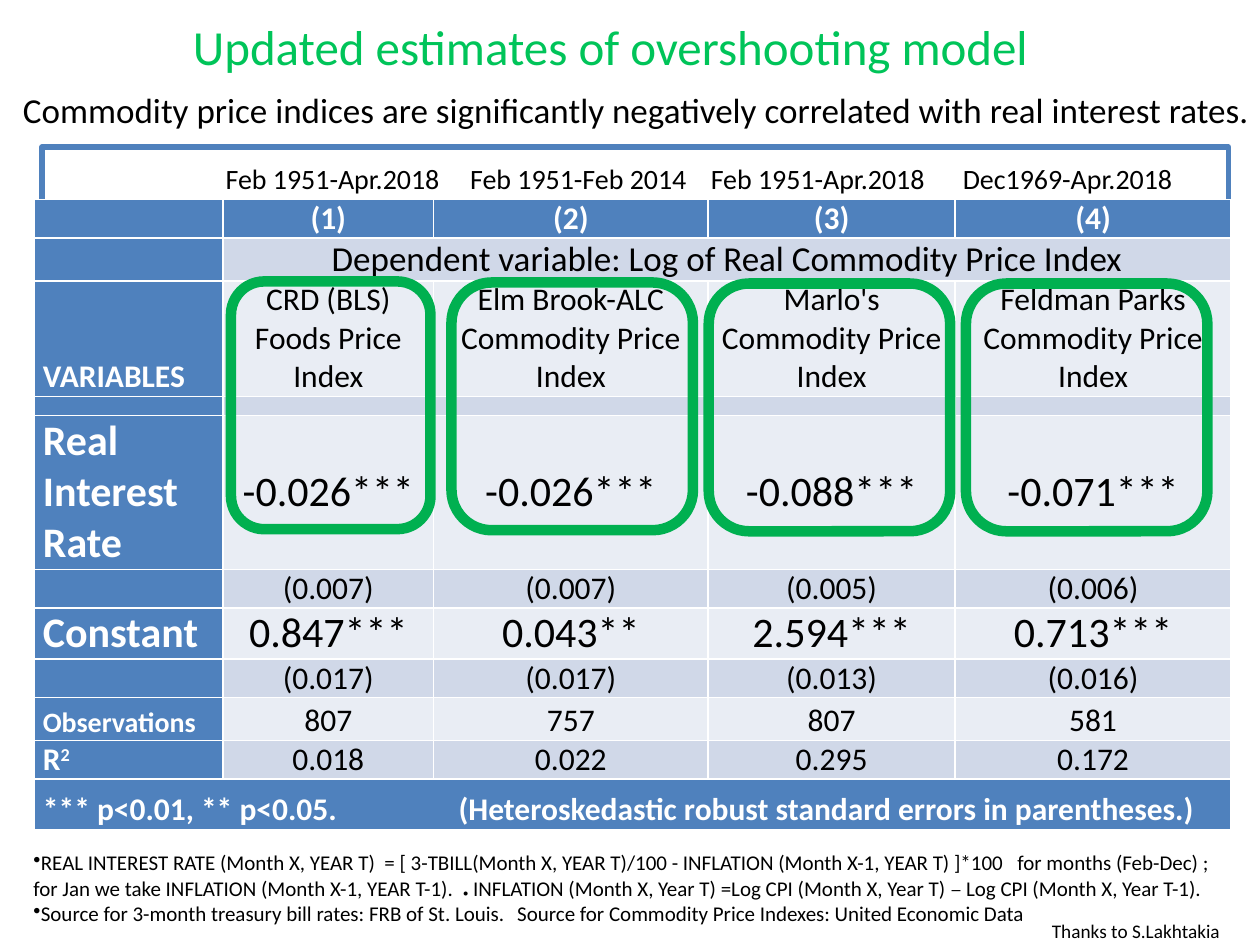
import lxml.etree
import pptx
import pptx.dml.color
import pptx.enum.shapes
import pptx.enum.text
import pptx.oxml.ns
import pptx.util

RGBColor = pptx.dml.color.RGBColor
BLUE = RGBColor(0x4F, 0x81, 0xBD)
DARK_BAND = RGBColor(0xD0, 0xD8, 0xE8)
LIGHT_BAND = RGBColor(0xE9, 0xED, 0xF4)
TITLE_GREEN = RGBColor(0x00, 0xC4, 0x59)
FRAME_GREEN = RGBColor(0x00, 0xB0, 0x50)
BLACK = RGBColor(0, 0, 0)
WHITE = RGBColor(255, 255, 255)

SHAPES = pptx.enum.shapes.MSO_SHAPE
ALIGN = pptx.enum.text.PP_ALIGN
ANCHOR = pptx.enum.text.MSO_ANCHOR
qn = pptx.oxml.ns.qn

COLUMNS, ROWS = 120, 90
COLUMN_WIDTHS = [1.5, 1.67, 2.18, 1.96, 2.19]
ROW_HEIGHTS = [0.27, 0.3, 0.81, 0.15, 1.08, 0.27, 0.36, 0.27, 0.34, 0.3, 0.4]
ESTIMATES = [
    (18, 18, ["", "(1)", "(2)", "(3)", "(4)"]),
    (18, 20, ["", "Dependent variable: Log of Real Commodity Price Index", "", "", ""]),
    (18, 18, ["VARIABLES", "CRD (BLS) Foods Price Index", "Elm Brook-ALC Commodity Price Index",
              "Marlo's Commodity Price Index", "Feldman Parks Commodity Price Index"]),
    (18, 18, ["", "", "", "", ""]),
    (24, 24, ["Real Interest Rate", "-0.026***\n", "-0.026***\n", "-0.088***\n", "-0.071***\n"]),
    (18, 18, ["", "(0.007)", "(0.007)", "(0.005)", "(0.006)"]),
    (24, 24, ["Constant", "0.847***", "0.043**", "2.594***", "0.713***"]),
    (18, 18, ["", "(0.017)", "(0.017)", "(0.013)", "(0.016)"]),
    (16, 18, ["Observations", "807", "757", "807", "581"]),
    (18, 18, ["R", "0.018", "0.022", "0.295", "0.172"]),
    (18, 18, ["*** p<0.01, ** p<0.05.\t(Heteroskedastic robust standard errors in parentheses.)",
              "", "", "", ""]),
]
SAMPLE_PERIODS = ["Feb 1951-Apr.2018", "Feb 1951-Feb 2014", "Feb 1951-Apr.2018", "Dec1969-Apr.2018"]
INDEX_FRAMES = [(22, 26.8, 19), (43, 26.9, 23), (67.5, 27, 23), (92, 27, 23)]
DEFINITION = [
    ("REAL INTEREST RATE (Month X, YEAR T)  = [ 3-TBILL(Month X, YEAR T)/100 - "
     "INFLATION (Month X-1, YEAR T) ]*100\tfor months (Feb-Dec) ;\v"
     "for Jan we take INFLATION (Month X-1, YEAR T-1).  ", 12, "Calibri"),
    ("●", 5, "Calibri"),
    (" INFLATION (Month X, Year T) =Log CPI (Month X, Year T) ", 12, "Calibri"),
    ("– ", 12, "Cambria"),
    ("Log CPI (Month X, Year T-1).", 12, "Calibri"),
]
SOURCES = [("Source for 3-month treasury bill rates: FRB of St. Louis.\t"
            "Source for Commodity Price Indexes: United Economic Data", 12, "Calibri")]


class SlideBuilder:
    font = "Calibri"

    def __init__(self, presentation):
        self.column = presentation.slide_width / COLUMNS
        self.row = presentation.slide_height / ROWS
        self.slide = presentation.slides.add_slide(presentation.slide_layouts[6])

    def place(self, left, top, width, height):
        return (round(left * self.column), round(top * self.row),
                round(width * self.column), round(height * self.row))

    def style(self, paragraph, size, color=BLACK, bold=False, align=ALIGN.LEFT):
        paragraph.alignment = align
        paragraph.font.name = self.font
        paragraph.font.size = pptx.util.Pt(size)
        paragraph.font.color.rgb = color
        paragraph.font.bold = bold

    def tabs(self, paragraph, stops):
        properties = paragraph._p.get_or_add_pPr()
        tab_list = lxml.etree.SubElement(properties, qn("a:tabLst"))
        for stop in stops:
            lxml.etree.SubElement(tab_list, qn("a:tab"), pos=str(pptx.util.Inches(stop)), algn="l")

    def bullet(self, paragraph):
        properties = paragraph._p.get_or_add_pPr()
        properties.set("marL", "0")
        properties.set("indent", "0")
        lxml.etree.SubElement(properties, qn("a:buChar"), char="•")

    def box(self, left, top, width, height):
        shape = self.slide.shapes.add_textbox(*self.place(left, top, width, height))
        shape.text_frame.word_wrap = False
        shape.text_frame.auto_size = pptx.enum.text.MSO_AUTO_SIZE.SHAPE_TO_FIT_TEXT
        return shape.text_frame

    def text(self, left, top, width, height, words, size, color=BLACK):
        paragraph = self.box(left, top, width, height).paragraphs[0]
        paragraph.text = words
        self.style(paragraph, size, color)

    def notes(self, left, top, width, height, items, stops):
        frame = self.box(left, top, width, height)
        frame.vertical_anchor = ANCHOR.MIDDLE
        for index, pieces in enumerate(items):
            paragraph = frame.add_paragraph() if index else frame.paragraphs[0]
            self.bullet(paragraph)
            self.tabs(paragraph, stops)
            self.style(paragraph, 12)
            for position, (words, size, font) in enumerate(pieces):
                for part, line in enumerate(words.split("\v")):
                    if part:
                        paragraph.add_line_break()
                    run = paragraph.add_run()
                    run.text = line
                    run.font.size = pptx.util.Pt(size)
                    run.font.name = font

    def outline(self, kind, left, top, width, height, color, weight):
        shape = self.slide.shapes.add_shape(kind, *self.place(left, top, width, height))
        shape.shadow.inherit = False
        shape.fill.background()
        shape.line.color.rgb = color
        shape.line.width = pptx.util.Pt(weight)
        return shape

    def header(self, left, top, width, height, labels, stops):
        shape = self.outline(SHAPES.RECTANGLE, left, top, width, height, BLUE, 3)
        shape.text_frame.vertical_anchor = ANCHOR.MIDDLE
        paragraph = shape.text_frame.paragraphs[0]
        paragraph.text = "".join("\t" + label for label in labels)
        self.tabs(paragraph, stops)
        self.style(paragraph, 16)

    def cell(self, cell, words, size, fill, color, bold, align):
        cell.fill.solid()
        cell.fill.fore_color.rgb = fill
        cell.vertical_anchor = ANCHOR.BOTTOM
        cell.margin_left = cell.margin_right = pptx.util.Inches(0.07)
        cell.margin_top = cell.margin_bottom = 0
        paragraph = cell.text_frame.paragraphs[0]
        if words:
            paragraph.text = words
            self.style(paragraph, size, color, bold, align)
        else:
            lxml.etree.SubElement(paragraph._p, qn("a:endParaRPr"), sz="900")
        return paragraph

    def table(self, left, top, width, height, rows):
        table = self.slide.shapes.add_table(
            len(rows), len(COLUMN_WIDTHS), *self.place(left, top, width, height)).table
        table.first_col = True
        for column, size in zip(table.columns, COLUMN_WIDTHS):
            column.width = pptx.util.Inches(size)
        for row, size in zip(table.rows, ROW_HEIGHTS):
            row.height = pptx.util.Inches(size)
        for r, (label_size, value_size, values) in enumerate(rows):
            for c, words in enumerate(values):
                heading = r == 0 or c == 0
                band = DARK_BAND if r % 2 else LIGHT_BAND
                self.cell(table.cell(r, c), words, value_size if c else label_size,
                          BLUE if heading else band, WHITE if heading else BLACK,
                          heading, ALIGN.CENTER if c else ALIGN.LEFT)
        return table


def main():
    presentation = pptx.Presentation()
    presentation.slide_width = pptx.util.Inches(10)
    presentation.slide_height = pptx.util.Inches(7.5)
    builder = SlideBuilder(presentation)

    builder.header(4, 14, 113, 6, SAMPLE_PERIODS, [1.36, 3.3, 5.21, 7.21])
    table = builder.table(3.25, 19, 114, 59.3, ESTIMATES)
    last = len(ESTIMATES) - 1
    table.cell(1, 1).merge(table.cell(1, 4))
    table.cell(last, 0).merge(table.cell(last, 4))
    builder.tabs(table.cell(last, 0).text_frame.paragraphs[0], [3.3])
    properties = table.cell(last, 0).text_frame.paragraphs[0]._p.get_or_add_pPr()
    properties.insert(0, properties.find(qn("a:tabLst")))
    exponent = table.cell(9, 0).text_frame.paragraphs[0].add_run()
    exponent.text = "2"
    exponent.font._element.set("baseline", "30000")

    builder.notes(2, 80.3, 116.5, 8.5, [DEFINITION, SOURCES], [3.84, 7.81])
    builder.text(1, 7.8, 120.4, 5.3,
                 "Commodity price indices are significantly negatively correlated with real interest rates.", 20)
    builder.text(17.2, 1, 82.8, 6.8, "Updated estimates of overshooting model", 28, TITLE_GREEN)
    builder.text(99, 87, 19, 3.5, "Thanks to S.Lakhtakia", 11)
    for left, top, width in INDEX_FRAMES:
        builder.outline(SHAPES.ROUNDED_RECTANGLE, left, top, width, 23.6, FRAME_GREEN, 6)

    presentation.save("out.pptx")


if __name__ == "__main__":
    main()
